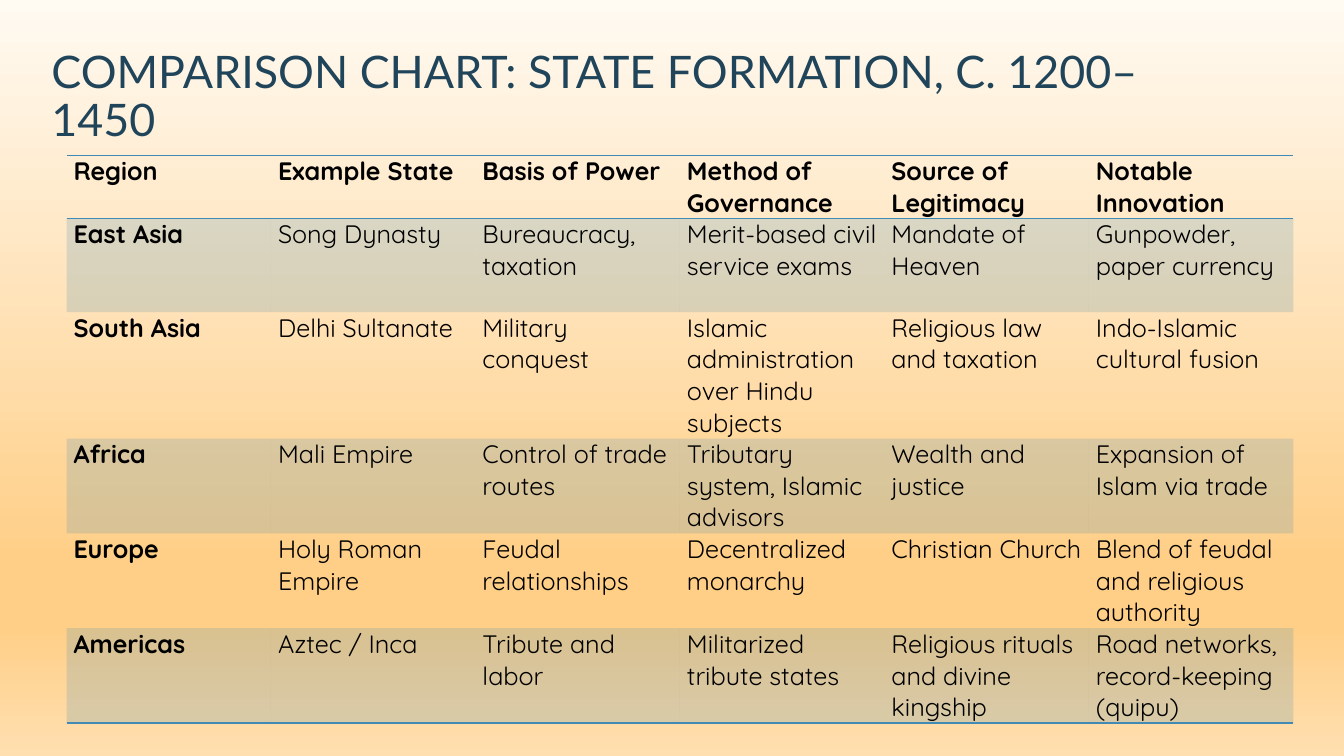
from copy import deepcopy
from lxml.etree import SubElement
from pptx import Presentation
from pptx.dml.color import RGBColor
from pptx.enum.text import MSO_ANCHOR as Anchor, MSO_AUTO_SIZE as AutoSize, PP_ALIGN as Align
from pptx.oxml import parse_xml
from pptx.oxml.ns import nsdecls, qn
from pptx.util import Inches, Pt

ACCENT = "418AB3"
LINE_HEIGHT = 0.31
NO_STYLE = "{2D5ABB26-0587-4C30-8999-92F81FD0307C}"
SKY = [(0, "FFFAF2"), (74, "FFCF88"), (83, "FFCF88"), (100, "FFDFB0")]
ROWS = [
    (2, ["Region", "Example State", "Basis of Power", "Method of Governance",
         "Source of Legitimacy", "Notable Innovation"]),
    (3, ["East Asia", "Song Dynasty", "Bureaucracy, taxation", "Merit-based civil service exams",
         "Mandate of Heaven", "Gunpowder, paper currency"]),
    (4, ["South Asia", "Delhi Sultanate", "Military conquest",
         "Islamic administration over Hindu subjects", "Religious law and taxation",
         "Indo-Islamic cultural fusion"]),
    (3, ["Africa", "Mali Empire", "Control of trade routes", "Tributary system, Islamic advisors",
         "Wealth and justice", "Expansion of Islam via trade"]),
    (3, ["Europe", "Holy Roman Empire", "Feudal relationships", "Decentralized monarchy",
         "Christian Church", "Blend of feudal and religious authority"]),
    (3, ["Americas", "Aztec / Inca", "Tribute and labor", "Militarized tribute states",
         "Religious rituals and divine kingship", "Road networks, record-keeping (quipu)"]),
]


def write(frame, text, font, size, color="000000", bold=False, spacing=1.0):
    frame.word_wrap = True
    para = frame.paragraphs[0]
    para.alignment = Align.LEFT
    para.line_spacing = spacing
    span = para.add_run()
    span.text = text
    span.font.name = font
    span.font.size = Pt(size)
    span.font.bold = bold
    span.font.color.rgb = RGBColor.from_string(color)


def add_border(cell, side):
    border = parse_xml(
        f'<a:{side} {nsdecls("a")} w="12700"><a:solidFill><a:srgbClr val="{ACCENT}"/>'
        f'</a:solidFill></a:{side}>')
    cell._tc.get_or_add_tcPr().append(border)


deck = Presentation()
deck.slide_width, deck.slide_height = Inches(13.33), Inches(7.5)
page = deck.slides.add_slide(deck.slide_layouts[5])

backdrop = page.background.fill
backdrop.gradient()
backdrop.gradient_angle = 270
stop_list = backdrop.gradient_stops[0]._gs.getparent()
for extra in range(len(SKY) - len(stop_list)):
    stop_list.append(deepcopy(stop_list[0]))
for stop, (share, color) in zip(backdrop.gradient_stops, SKY):
    stop.position = share / 100
    stop.color.rgb = RGBColor.from_string(color)

title = page.shapes.title
title.left, title.top = Inches(0.41), Inches(0.67)
title.width, title.height = Inches(11.92), Inches(0.83)
title.text_frame.auto_size = AutoSize.NONE
title.text_frame.vertical_anchor = Anchor.BOTTOM
write(title.text_frame, "COMPARISON CHART: STATE FORMATION, C. 1200–1450",
      "Lato", 32, color="20455A", spacing=0.9)

total_lines = sum(lines for lines, texts in ROWS)
frame = page.shapes.add_table(len(ROWS), len(ROWS[0][1]), Inches(0.66), Inches(1.54),
                              Inches(12.17), Inches(total_lines * LINE_HEIGHT))
table = frame.table
table.first_row = table.horz_banding = False
table._tbl.tblPr.find(qn("a:tableStyleId")).text = NO_STYLE

for row, (lines, texts) in enumerate(ROWS):
    table.rows[row].height = Inches(lines * LINE_HEIGHT)
    for column, text in enumerate(texts):
        cell = table.cell(row, column)
        cell.margin_left = cell.margin_right = Inches(0.07)
        cell.margin_top = cell.margin_bottom = 0
        write(cell.text_frame, text, "Quicksand", 18, bold=row == 0 or column == 0)
        if row == 0:
            add_border(cell, "lnT")
        if row in (0, len(ROWS) - 1):
            add_border(cell, "lnB")
        if row % 2:
            cell.fill.solid()
            cell.fill.fore_color.rgb = RGBColor.from_string(ACCENT)
            tint = cell._tc.tcPr.find(qn("a:solidFill")).find(qn("a:srgbClr"))
            SubElement(tint, qn("a:alpha"), val="20000")
        else:
            cell.fill.background()

deck.save("out.pptx")
